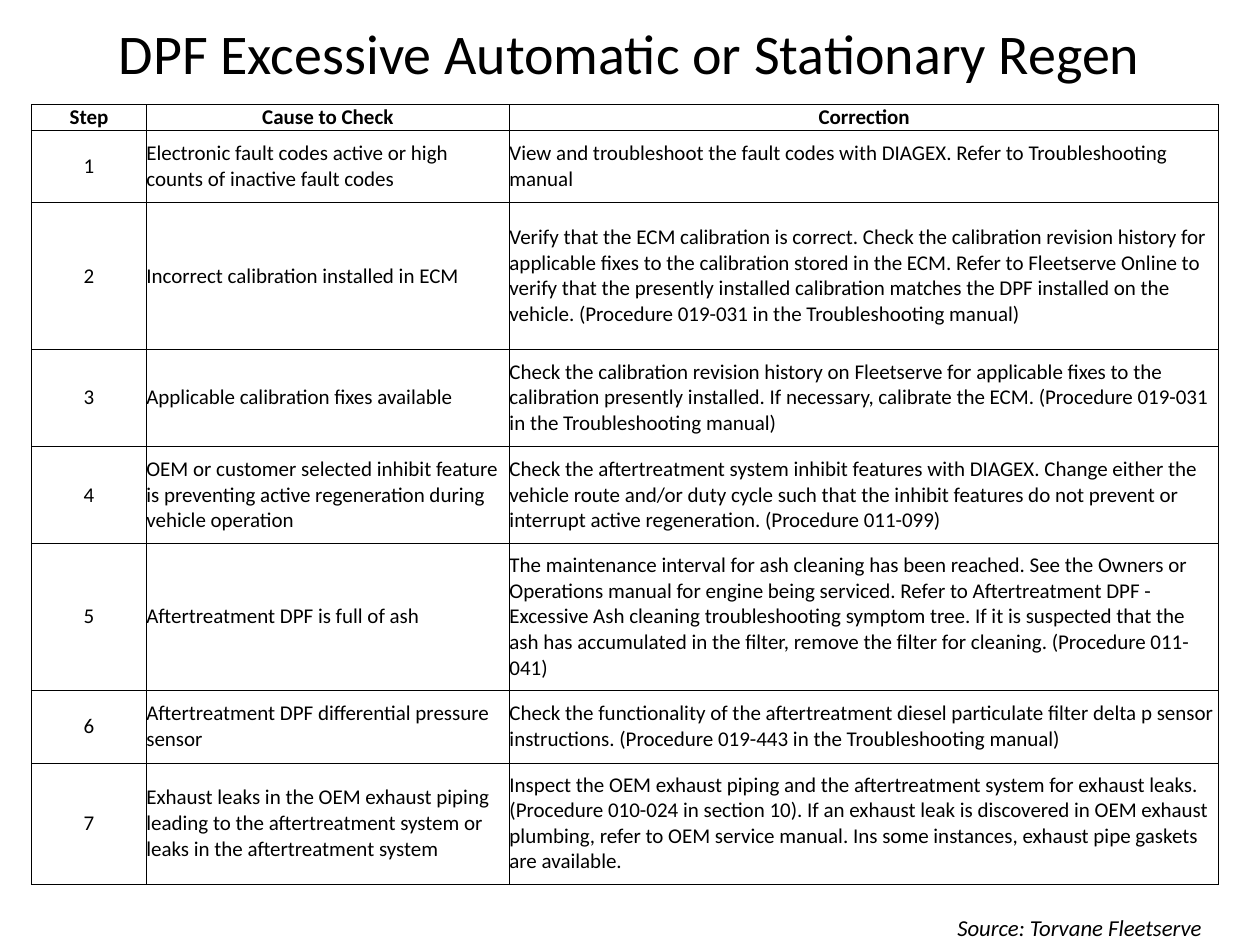
"""Build a slide with a troubleshooting table for excessive DPF regeneration."""
from dataclasses import dataclass

from lxml.etree import SubElement
from pptx import Presentation
from pptx.dml.color import RGBColor
from pptx.enum.text import MSO_ANCHOR, PP_ALIGN
from pptx.oxml.ns import qn
from pptx.slide import Slide
from pptx.table import _Cell
from pptx.text.text import _Paragraph
from pptx.util import Cm, Pt


@dataclass(frozen=True)
class Theme:
    font: str = "Calibri"
    ink: str = "000000"
    title: float = 32
    body: float = 12
    source: float = 13
    rule: float = 0.5


@dataclass(frozen=True)
class Label:
    text: str
    left: float
    top: float
    width: float
    height: float
    size: float
    align: PP_ALIGN = PP_ALIGN.LEFT
    anchor: MSO_ANCHOR = MSO_ANCHOR.TOP
    italic: bool = False


@dataclass(frozen=True)
class Step:
    height: float
    cause: str
    fix: str


THEME = Theme()
WIDTHS = (2.31, 7.32, 14.3)
HEAD = ("Step", "Cause to Check", "Correction")
HEAD_HIGH = 0.48

LABELS = (
    Label("DPF Excessive Automatic or Stationary Regen", 1.27, 0, 22.86, 2.11,
          THEME.title, PP_ALIGN.CENTER, MSO_ANCHOR.MIDDLE),
    Label("Source: Torvane Fleetserve", 19.05, 18.29, 6.35, 0.81,
          THEME.source, italic=True),
)

STEPS = (
    Step(1.47, "Electronic fault codes active or high counts of inactive fault codes",
         "View and troubleshoot the fault codes with DIAGEX. Refer to "
         "Troubleshooting manual"),
    Step(2.95, "Incorrect calibration installed in ECM",
         "Verify that the ECM calibration is correct. Check the calibration "
         "revision history for applicable fixes to the calibration stored in the "
         "ECM. Refer to Fleetserve Online to verify that the presently installed "
         "calibration matches the DPF installed on the vehicle. (Procedure "
         "019-031 in the Troubleshooting manual)"),
    Step(1.96, "Applicable calibration fixes available",
         "Check the calibration revision history on Fleetserve for applicable "
         "fixes to the calibration presently installed. If necessary, calibrate "
         "the ECM. (Procedure 019-031 in the Troubleshooting manual)"),
    Step(1.96, "OEM or customer selected inhibit feature is preventing active "
         "regeneration during vehicle operation",
         "Check the aftertreatment system inhibit features with DIAGEX. Change "
         "either the vehicle route and/or duty cycle such that the inhibit "
         "features do not prevent or interrupt active regeneration. (Procedure "
         "011-099)"),
    Step(2.95, "Aftertreatment DPF is full of ash",
         "The maintenance interval for ash cleaning has been reached. See the "
         "Owners or Operations manual for engine being serviced. Refer to "
         "Aftertreatment DPF - Excessive Ash cleaning troubleshooting symptom "
         "tree. If it is suspected that the ash has accumulated in the filter, "
         "remove the filter for cleaning. (Procedure 011-041)"),
    Step(1.47, "Aftertreatment DPF differential pressure sensor",
         "Check the functionality of the aftertreatment diesel particulate "
         "filter delta p sensor instructions. (Procedure 019-443 in the "
         "Troubleshooting manual)"),
    Step(2.44, "Exhaust leaks in the OEM exhaust piping leading to the "
         "aftertreatment system or leaks in the aftertreatment system",
         "Inspect the OEM exhaust piping and the aftertreatment system for "
         "exhaust leaks. (Procedure 010-024 in section 10). If an exhaust leak "
         "is discovered in OEM exhaust plumbing, refer to OEM service manual. "
         "Ins some instances, exhaust pipe gaskets are available."),
)


def style(para: _Paragraph, size: float, align: PP_ALIGN,
          bold: bool = False, italic: bool = False) -> None:
    """Set the alignment and font of a paragraph."""
    para.alignment = align
    font = para.font
    font.name, font.size = THEME.font, Pt(size)
    font.bold, font.italic = bold, italic
    font.color.rgb = RGBColor.from_string(THEME.ink)


def add_label(slide: Slide, label: Label) -> None:
    """Add a text box."""
    box = slide.shapes.add_textbox(Cm(label.left), Cm(label.top),
                                   Cm(label.width), Cm(label.height))
    frame = box.text_frame
    frame.word_wrap = True
    frame.vertical_anchor = label.anchor
    frame.text = label.text
    style(frame.paragraphs[0], label.size, label.align, italic=label.italic)


def add_rules(cell: _Cell) -> None:
    """Draw a thin line on every side of a cell."""
    props = cell._tc.get_or_add_tcPr()
    for side in ("a:lnL", "a:lnR", "a:lnT", "a:lnB"):
        line = SubElement(props, qn(side), w=str(Pt(THEME.rule)))
        fill = SubElement(line, qn("a:solidFill"))
        SubElement(fill, qn("a:srgbClr"), val=THEME.ink)


def fill_cell(cell: _Cell, text: str, align: PP_ALIGN, bold: bool) -> None:
    """Write the text of a cell and set its look."""
    cell.text = text
    cell.vertical_anchor = MSO_ANCHOR.MIDDLE
    cell.margin_left = cell.margin_right = Cm(0)
    cell.margin_top = cell.margin_bottom = Cm(0)
    add_rules(cell)
    cell.fill.background()
    style(cell.text_frame.paragraphs[0], THEME.body, align, bold)


def add_steps(slide: Slide) -> None:
    """Add the table of steps under its header row."""
    highs = [HEAD_HIGH] + [step.height for step in STEPS]
    rows = [HEAD] + [(str(num), step.cause, step.fix)
                     for num, step in enumerate(STEPS, 1)]
    table = slide.shapes.add_table(len(rows), len(HEAD), Cm(0.64), Cm(2.11),
                                   Cm(sum(WIDTHS)), Cm(sum(highs))).table
    table.first_row = table.horz_banding = False
    for column, width in zip(table.columns, WIDTHS):
        column.width = Cm(width)
    for i, (high, texts) in enumerate(zip(highs, rows)):
        table.rows[i].height = Cm(high)
        for j, text in enumerate(texts):
            mid = i == 0 or j == 0
            align = PP_ALIGN.CENTER if mid else PP_ALIGN.LEFT
            fill_cell(table.cell(i, j), text, align, bold=i == 0)


def main() -> None:
    """Build and save the slide."""
    deck = Presentation()
    deck.slide_width, deck.slide_height = Cm(25.4), Cm(19.05)
    slide = deck.slides.add_slide(deck.slide_layouts[6])
    for label in LABELS:
        add_label(slide, label)
    add_steps(slide)
    deck.save("out.pptx")


if __name__ == "__main__":
    main()
